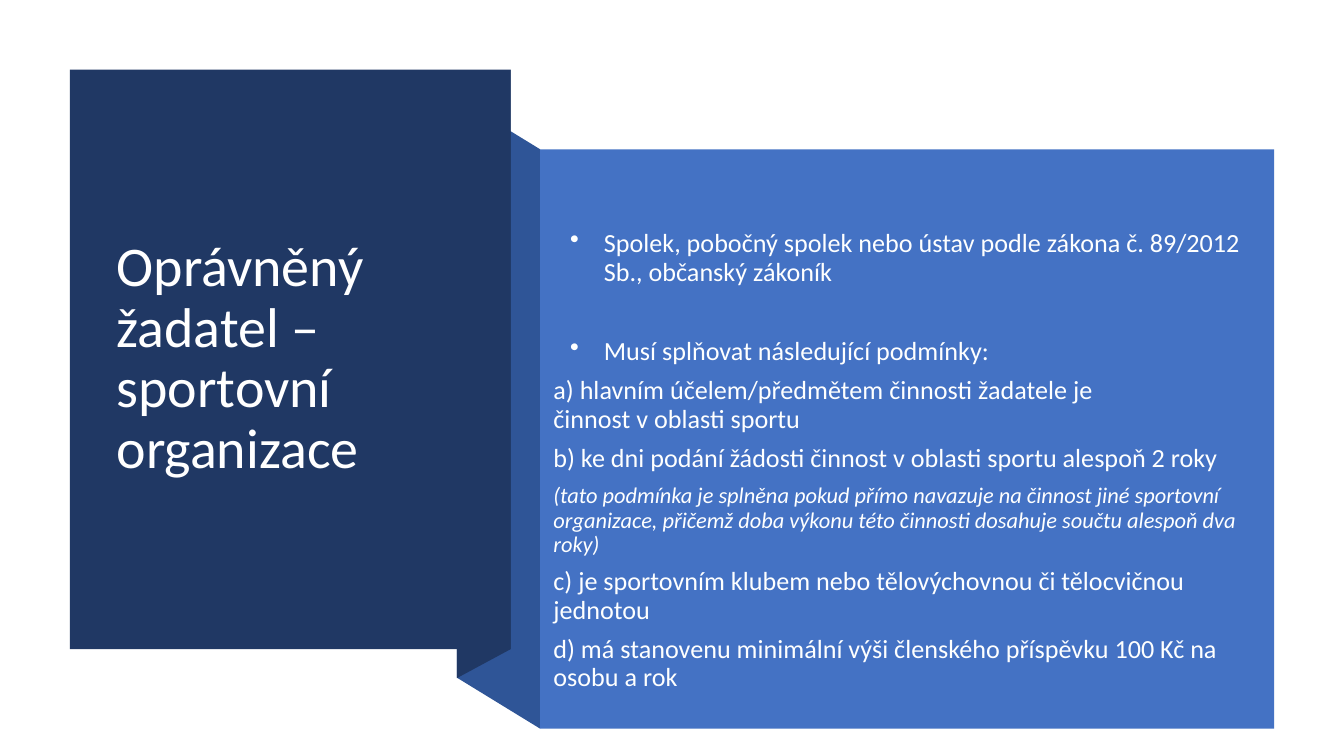
from collections import namedtuple
from dataclasses import dataclass

import pptx
import pptx.dml.color
import pptx.enum.shapes
import pptx.enum.text
import pptx.util
from lxml import etree

Pt = pptx.util.Pt
Box = namedtuple("Box", "left top width height")


@dataclass(frozen=True)
class Theme:
    font: str = "Calibri"
    navy: str = "203864"
    fold: str = "2F5597"
    blue: str = "4472C4"
    title_color: str = "FFFFFF"
    body_color: str = "FEFFFF"
    title_size: float = 30
    body_size: float = 14
    note_size: float = 12


THEME = Theme()
CARD = Box(37.4, 37.4, 236.2, 310.4)
PANEL = Box(289.4, 80, 393.2, 310.4)
FOLD_LEFT = 244.8

BULLET = dict(bullet="•", indent=18, margin=27)
CONDITIONS = [
    ("Spolek, pobočný spolek nebo ústav podle zákona č. 89/2012 Sb., občanský zákoník",
     dict(BULLET, after=27.4)),
    ("Musí splňovat následující podmínky:", BULLET),
    ("a) hlavním účelem/předmětem činnosti žadatele je\včinnost v oblasti sportu", {}),
    ("b) ke dni podání žádosti činnost v oblasti sportu alespoň 2 roky", {}),
    ("(tato podmínka je splněna pokud přímo navazuje na činnost jiné sportovní organizace, "
     "přičemž doba výkonu této činnosti dosahuje součtu alespoň dva roky)",
     dict(size=THEME.note_size, italic=True)),
    ("c) je sportovním klubem nebo tělovýchovnou či tělocvičnou jednotou", {}),
    ("d) má stanovenu minimální výši členského příspěvku 100 Kč na osobu a rok", {}),
]


def paint(shape, color):
    shape.shadow.inherit = False
    shape.fill.solid()
    shape.fill.fore_color.rgb = pptx.dml.color.RGBColor.from_string(color)
    shape.line.fill.background()


def add_rectangle(page, box, color):
    kind = pptx.enum.shapes.MSO_SHAPE.RECTANGLE
    paint(page.shapes.add_shape(kind, *map(Pt, box)), color)


def add_polygon(page, points, color):
    start, *rest = [(Pt(x), Pt(y)) for x, y in points]
    builder = page.shapes.build_freeform(*start)
    builder.add_line_segments(rest, close=True)
    paint(builder.convert_to_shape(), color)


def add_text_frame(page, box):
    frame = page.shapes.add_textbox(*map(Pt, box)).text_frame
    frame.word_wrap = True
    frame.vertical_anchor = pptx.enum.text.MSO_ANCHOR.MIDDLE
    return frame


def write(para, text, *, size=THEME.body_size, color=THEME.body_color,
          italic=False, after=6, bullet=None, indent=0, margin=0):
    para.text = text
    para.line_spacing = 0.9
    para.space_after = Pt(after)
    for span in para.runs:
        span.font.name = THEME.font
        span.font.size = Pt(size)
        span.font.italic = italic
        span.font.color.rgb = pptx.dml.color.RGBColor.from_string(color)
    if bullet:
        properties = para._p.get_or_add_pPr()
        properties.set("marL", str(Pt(margin)))
        properties.set("indent", str(-Pt(indent)))
        mark = etree.SubElement(properties, pptx.oxml.ns.qn("a:buChar"))
        mark.set("char", bullet)


def add_ribbon(page, card, panel, fold_left):
    """Folded band that links the title card to the panel."""
    card_right = card.left + card.width
    for edge, box, slant, color in (
        (panel.left, panel, -27.3, THEME.fold),
        (card_right, card, 15.5, THEME.navy),
    ):
        bottom = box.top + box.height
        add_polygon(page, [(edge, bottom), (fold_left, bottom + slant),
                           (fold_left, box.top + slant), (edge, box.top)], color)


def add_title_card(page, box):
    add_rectangle(page, box, THEME.navy)
    side, end = 18, 20.6
    frame = add_text_frame(page, Box(box.left + side, box.top + end,
                                     box.width - 2 * side, box.height - 2 * end))
    write(frame.paragraphs[0], "Oprávněný žadatel – sportovní organizace",
          size=THEME.title_size, color=THEME.title_color, after=0)


def add_conditions_panel(page, box):
    add_rectangle(page, box, THEME.blue)
    drop = 24
    frame = add_text_frame(page, box._replace(top=box.top + drop, height=box.height - drop))
    for number, (text, style) in enumerate(CONDITIONS):
        para = frame.add_paragraph() if number else frame.paragraphs[0]
        write(para, text, **style)


def main():
    deck = pptx.Presentation()
    deck.slide_width, deck.slide_height = Pt(720), Pt(405)
    page = deck.slides.add_slide(deck.slide_layouts[6])
    add_ribbon(page, CARD, PANEL, FOLD_LEFT)
    add_title_card(page, CARD)
    add_conditions_panel(page, PANEL)
    deck.save("out.pptx")


if __name__ == "__main__":
    main()
